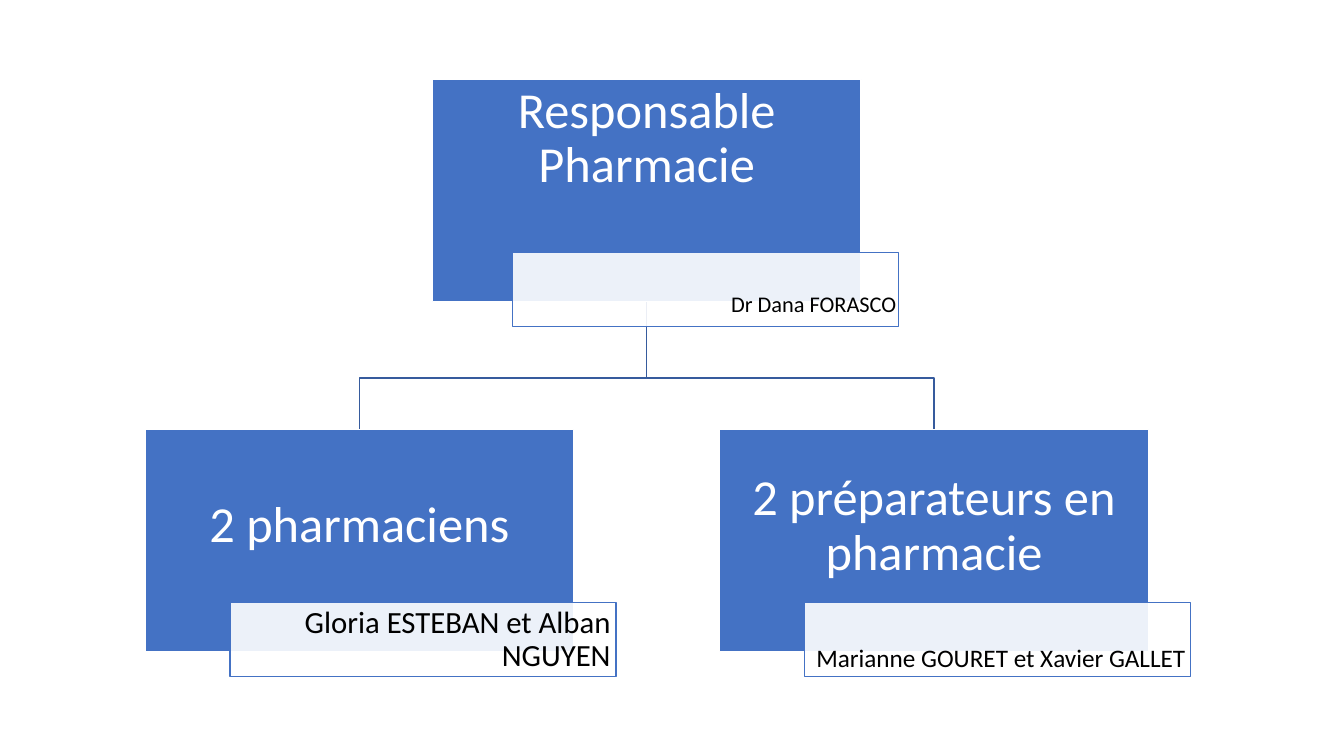
"""Organisation chart of the pharmacy team on one slide."""
from dataclasses import dataclass

from lxml.etree import SubElement
from pptx import Presentation
from pptx.dml.color import RGBColor
from pptx.enum.shapes import MSO_SHAPE
from pptx.enum.text import MSO_ANCHOR, PP_ALIGN
from pptx.oxml.ns import qn
from pptx.util import Cm, Pt

ROLES = [
    {"role": "Responsable Pharmacie", "people": "Dr Dana FORASCO",
     "column": 1, "level": 0, "tag_shift": 2.01, "people_size": 16,
     "role_anchor": MSO_ANCHOR.TOP, "role_insets": (0.08, 0.13, 0.08, 0.79),
     "people_anchor": MSO_ANCHOR.BOTTOM, "people_insets": (0.05, 0, 0.05, 0.23)},
    {"role": "2 pharmaciens", "people": "Gloria ESTEBAN et Alban NGUYEN",
     "column": 0, "level": 1, "tag_shift": 2.14, "people_size": 22,
     "role_anchor": MSO_ANCHOR.MIDDLE, "role_insets": (0.08, 0.08, 0.08, 0.79),
     "people_anchor": MSO_ANCHOR.MIDDLE, "people_insets": (0.14, 0.05, 0.14, 0.05)},
    {"role": "2 préparateurs en pharmacie", "people": "Marianne GOURET et Xavier GALLET",
     "column": 2, "level": 1, "tag_shift": 2.14, "people_size": 18,
     "role_anchor": MSO_ANCHOR.MIDDLE, "role_insets": (0.08, 0.08, 0.08, 0.79),
     "people_anchor": MSO_ANCHOR.BOTTOM, "people_insets": (0.13, 0, 0.13, 0.09)},
]

LEFT, TOP = 3.66, 2.01
COLUMN_STEP, LEVEL_STEP = 7.24, 8.82
ROLE_WIDTH, ROLE_HEIGHT = 10.8, 5.59
TAG_WIDTH, TAG_HEIGHT, TAG_DROP = 9.73, 1.86, 4.36
BRANCH_DROP = 1.93


@dataclass(frozen=True)
class Theme:
    font: str = "Calibri"
    role_size: int = 36
    line_width: int = 1
    blue: RGBColor = RGBColor(0x44, 0x72, 0xC4)
    branch: RGBColor = RGBColor(0x36, 0x5B, 0x9D)
    white: RGBColor = RGBColor(0xFF, 0xFF, 0xFF)
    black: RGBColor = RGBColor(0, 0, 0)
    tag_alpha: int = 90


THEME = Theme()


def write(shape, text, *, size, color, align, anchor, insets):
    frame = shape.text_frame
    frame.word_wrap = True
    frame.vertical_anchor = anchor
    (frame.margin_left, frame.margin_top,
     frame.margin_right, frame.margin_bottom) = map(Cm, insets)
    paragraph = frame.paragraphs[0]
    paragraph.text = text
    paragraph.alignment = align
    paragraph.line_spacing = 0.9
    font = paragraph.runs[0].font
    font.name, font.size = THEME.font, Pt(size)
    font.color.rgb = color


def outline(shape, color):
    shape.shadow.inherit = False
    shape.line.color.rgb = color
    shape.line.width = Pt(THEME.line_width)


def add_box(slide, left, top, width, height, fill, line):
    box = slide.shapes.add_shape(
        MSO_SHAPE.RECTANGLE, Cm(left), Cm(top), Cm(width), Cm(height))
    box.fill.solid()
    box.fill.fore_color.rgb = fill
    outline(box, line)
    return box


def corner(entry):
    return LEFT + entry["column"] * COLUMN_STEP, TOP + entry["level"] * LEVEL_STEP


def add_branch(slide, parent, child):
    parent_left, parent_top = corner(parent)
    child_left, child_top = corner(child)
    start_x, end_x = parent_left + ROLE_WIDTH / 2, child_left + ROLE_WIDTH / 2
    start_y = parent_top + ROLE_HEIGHT
    bend_y = start_y + BRANCH_DROP
    builder = slide.shapes.build_freeform(Cm(start_x), Cm(start_y))
    turns = [(start_x, bend_y), (end_x, bend_y), (end_x, child_top)]
    builder.add_line_segments([(Cm(x), Cm(y)) for x, y in turns], close=False)
    branch = builder.convert_to_shape()
    branch.fill.background()
    outline(branch, THEME.branch)


def add_role(slide, entry):
    left, top = corner(entry)
    role = add_box(slide, left, top, ROLE_WIDTH, ROLE_HEIGHT, THEME.blue, THEME.white)
    write(role, entry["role"], size=THEME.role_size, color=THEME.white,
          align=PP_ALIGN.CENTER, anchor=entry["role_anchor"], insets=entry["role_insets"])
    tag = add_box(slide, left + entry["tag_shift"], top + TAG_DROP,
                  TAG_WIDTH, TAG_HEIGHT, THEME.white, THEME.blue)
    tint = tag.fill._xPr.find(qn("a:solidFill"))[0]
    SubElement(tint, qn("a:alpha"), val=str(THEME.tag_alpha * 1000))
    write(tag, entry["people"], size=entry["people_size"], color=THEME.black,
          align=PP_ALIGN.RIGHT, anchor=entry["people_anchor"], insets=entry["people_insets"])


def main():
    deck = Presentation()
    deck.slide_width, deck.slide_height = Cm(33.87), Cm(19.05)
    slide = deck.slides.add_slide(deck.slide_layouts[6])
    head, *team = ROLES
    for member in reversed(team):
        add_branch(slide, head, member)
    for entry in ROLES:
        add_role(slide, entry)
    deck.save("out.pptx")


if __name__ == "__main__":
    main()
